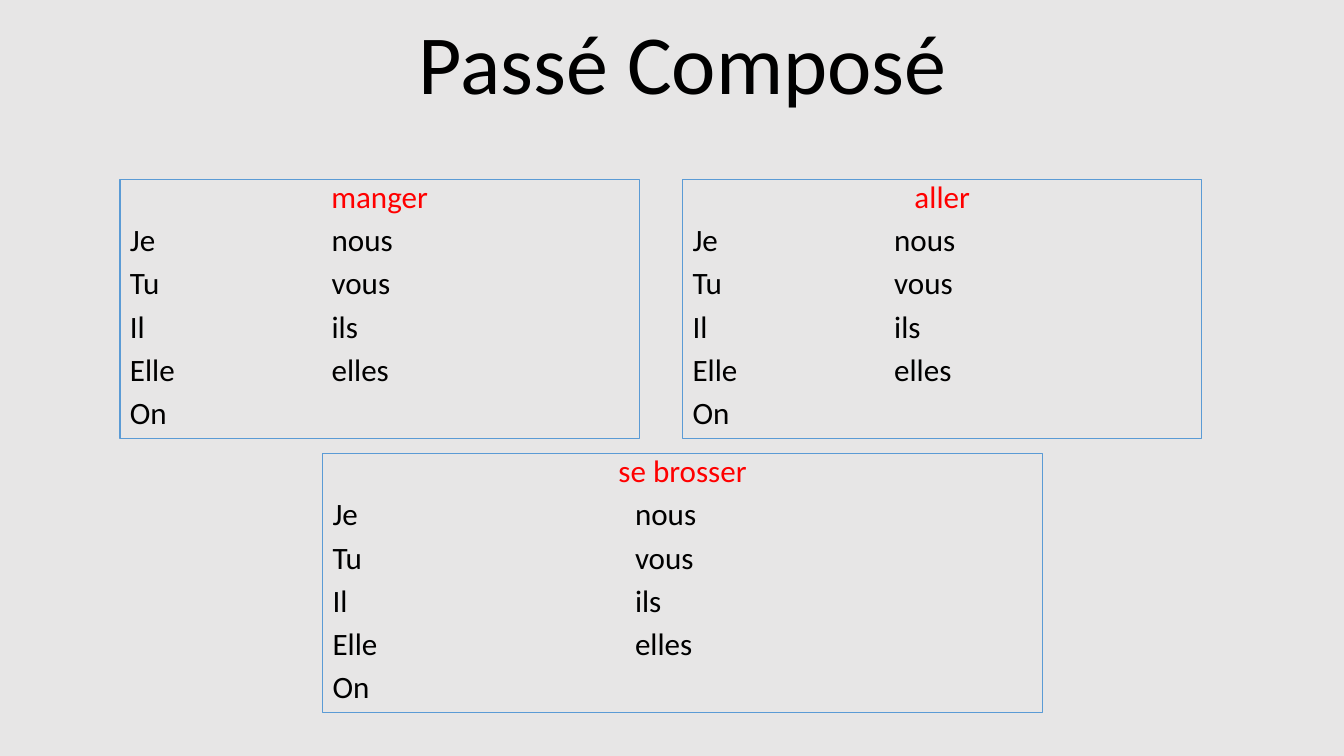
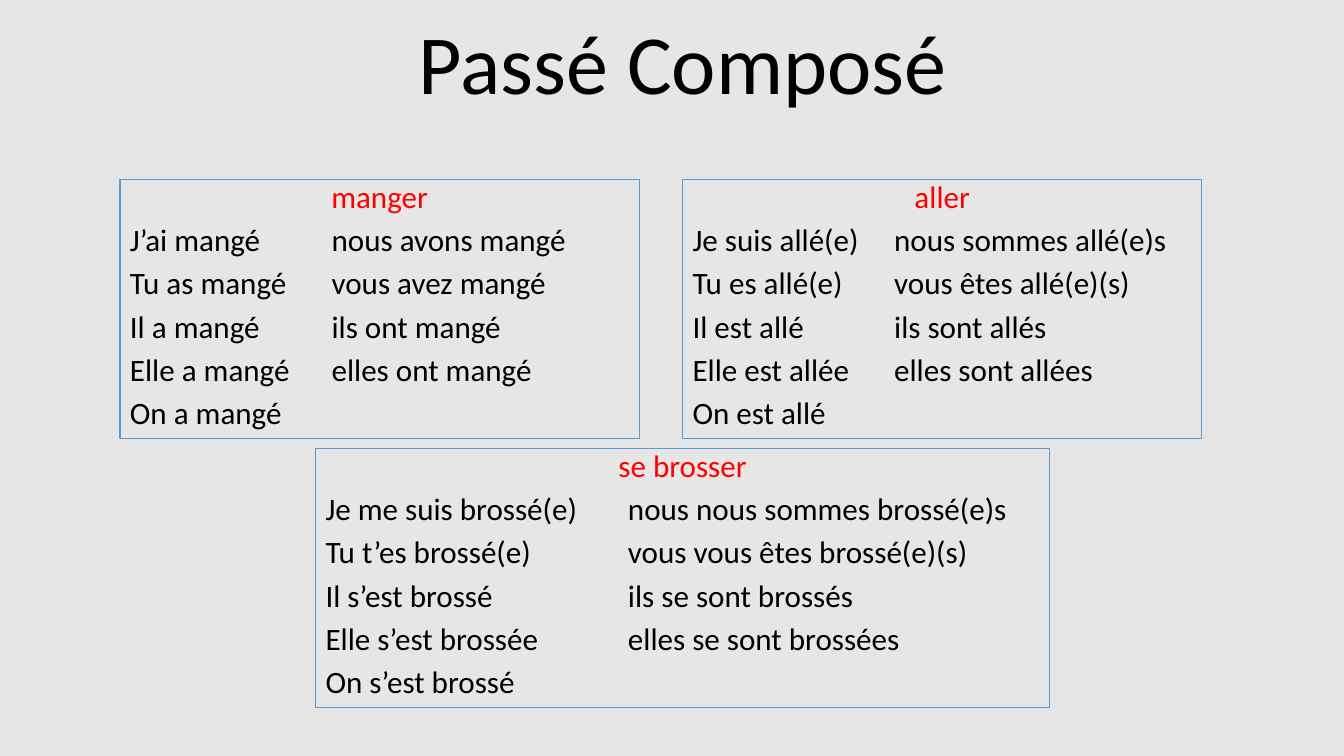
from dataclasses import dataclass

from lxml.etree import SubElement
from pptx import Presentation
from pptx.dml.color import RGBColor
from pptx.enum.shapes import MSO_SHAPE
from pptx.enum.text import MSO_ANCHOR, MSO_AUTO_SIZE, PP_ALIGN
from pptx.oxml.ns import qn
from pptx.slide import Slide
from pptx.text.text import _Paragraph
from pptx.util import Inches, Pt

FONT = "Calibri"
BACKGROUND, INK, VERB_RED, BORDER = "E7E6E6", "000000", "FF0000", "5B9BD5"
CARD_HEIGHT = 2.57
TITLE_ONLY = 5


@dataclass(frozen=True)
class Frame:
    """Place of a verb card and of its plural column, in inches."""

    left: float
    top: float
    width: float
    plural_tab: float


@dataclass(frozen=True)
class Conjugation:
    """A verb with its singular and plural forms."""

    verb: str
    frame: Frame
    singular: tuple[str, ...]
    plural: tuple[str, ...]


LEFT_CARD = Frame(1.19, 1.78, 5.15, 2)
RIGHT_CARD = Frame(6.77, 1.78, 5.15, 2)
BLANK_LOWER_CARD = Frame(3.2, 4.5, 7.14, 3)
FILLED_LOWER_CARD = Frame(3.13, 4.45, 7.28, 3)

SINGULAR_PRONOUNS = ("Je", "Tu", "Il", "Elle", "On")
PLURAL_PRONOUNS = ("nous", "vous", "ils", "elles")

EXERCISE = [
    Conjugation(verb, frame, SINGULAR_PRONOUNS, PLURAL_PRONOUNS)
    for verb, frame in (
        ("manger", LEFT_CARD),
        ("aller", RIGHT_CARD),
        ("se brosser", BLANK_LOWER_CARD),
    )
]
ANSWERS = [
    Conjugation(
        "manger",
        LEFT_CARD,
        ("J’ai mangé", "Tu as mangé", "Il a mangé", "Elle a mangé", "On a mangé"),
        ("nous avons mangé", "vous avez mangé", "ils ont mangé", "elles ont mangé"),
    ),
    Conjugation(
        "aller",
        RIGHT_CARD,
        ("Je suis allé(e)", "Tu es allé(e)", "Il est allé", "Elle est allée", "On est allé"),
        ("nous sommes allé(e)s", "vous êtes allé(e)(s)", "ils sont allés", "elles sont allées"),
    ),
    Conjugation(
        "se brosser",
        FILLED_LOWER_CARD,
        (
            "Je me suis brossé(e)",
            "Tu t’es brossé(e)",
            "Il s’est brossé",
            "Elle s’est brossée",
            "On s’est brossé",
        ),
        (
            "nous nous sommes brossé(e)s",
            "vous vous êtes brossé(e)(s)",
            "ils se sont brossés",
            "elles se sont brossées",
        ),
    ),
]


def color(value: str) -> RGBColor:
    """Turn a hex string into a colour."""
    return RGBColor.from_string(value)


def add_run(paragraph: _Paragraph, text: str, size: float, ink: str) -> None:
    """Add one run of styled text."""
    run = paragraph.add_run()
    run.text = text
    run.font.name = FONT
    run.font.size = Pt(size)
    run.font.color.rgb = color(ink)


def add_tab_stop(paragraph: _Paragraph, position: float) -> None:
    """Give a paragraph one left tab stop."""
    tabs = SubElement(paragraph._p.get_or_add_pPr(), qn("a:tabLst"))
    SubElement(tabs, qn("a:tab"), pos=str(Inches(position)), algn="l")


def add_title(slide: Slide, text: str) -> None:
    """Place and fill the title placeholder."""
    title = slide.shapes.title
    title.left, title.top = Inches(1.77), Inches(0.02)
    title.width, title.height = Inches(10), Inches(1.15)
    frame = title.text_frame
    frame.vertical_anchor = MSO_ANCHOR.BOTTOM
    frame.auto_size = MSO_AUTO_SIZE.NONE
    heading = frame.paragraphs[0]
    heading.alignment = PP_ALIGN.CENTER
    heading.line_spacing = 0.9
    add_run(heading, text, 60, INK)


def add_card(slide: Slide, conjugation: Conjugation) -> None:
    """Draw a bordered card with a verb and its forms."""
    place = conjugation.frame
    card = slide.shapes.add_shape(
        MSO_SHAPE.RECTANGLE,
        Inches(place.left),
        Inches(place.top),
        Inches(place.width),
        Inches(CARD_HEIGHT),
    )
    card.shadow.inherit = False
    card.fill.background()
    card.line.color.rgb = color(BORDER)
    card.line.width = Pt(0.75)
    body = card.text_frame
    body.word_wrap = True
    body.vertical_anchor = MSO_ANCHOR.TOP

    pairs = zip(conjugation.singular, conjugation.plural)
    forms = ["\t".join(pair) for pair in pairs]
    forms += conjugation.singular[len(conjugation.plural):]
    for index, line in enumerate([conjugation.verb, *forms]):
        is_verb = index == 0
        paragraph = body.paragraphs[0] if is_verb else body.add_paragraph()
        paragraph.alignment = PP_ALIGN.CENTER if is_verb else PP_ALIGN.LEFT
        paragraph.line_spacing = 0.8
        paragraph.space_before = Pt(9.6)
        if "\t" in line:
            add_tab_stop(paragraph, place.plural_tab)
        add_run(paragraph, line, 22.2, VERB_RED if is_verb else INK)


def main() -> None:
    """Build the exercise slide and the answer slide."""
    deck = Presentation()
    deck.slide_width, deck.slide_height = Inches(13.33), Inches(7.5)
    backdrop = deck.slide_master.background.fill
    backdrop.solid()
    backdrop.fore_color.rgb = color(BACKGROUND)
    for conjugations in (EXERCISE, ANSWERS):
        slide = deck.slides.add_slide(deck.slide_layouts[TITLE_ONLY])
        add_title(slide, "Passé Composé")
        for conjugation in conjugations:
            add_card(slide, conjugation)
    deck.save("out.pptx")


if __name__ == "__main__":
    main()
